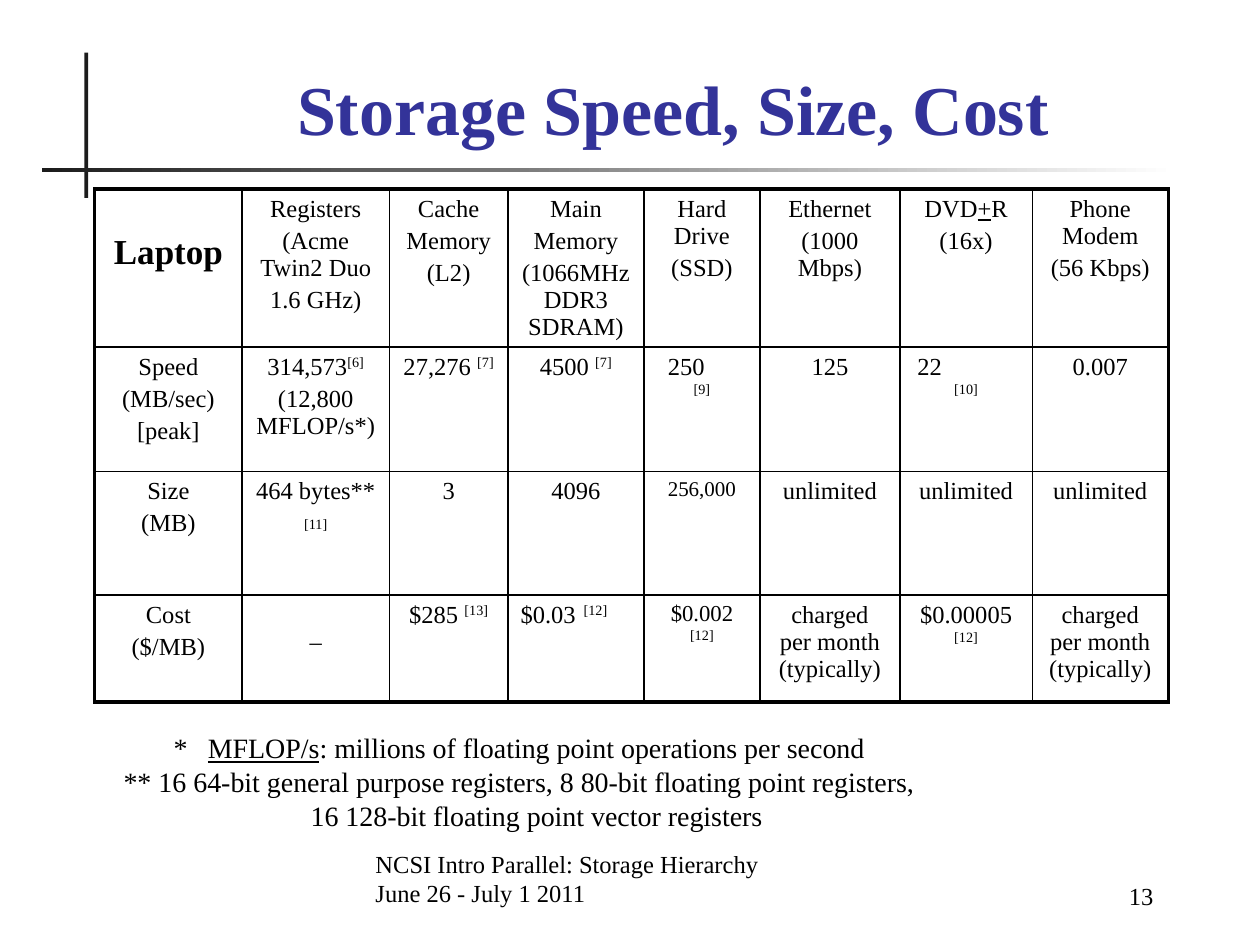
from dataclasses import dataclass

from lxml.etree import SubElement
from pptx import Presentation
from pptx.dml.color import RGBColor
from pptx.enum.shapes import MSO_SHAPE
from pptx.enum.text import MSO_ANCHOR, MSO_AUTO_SIZE, PP_ALIGN
from pptx.oxml.ns import qn
from pptx.util import Cm, Pt


@dataclass(frozen=True)
class Theme:
    font: str = "Times New Roman"
    text: RGBColor = RGBColor(0, 0, 0)
    title: RGBColor = RGBColor(0x33, 0x33, 0x99)
    rule: RGBColor = RGBColor(0x1C, 0x1C, 0x1C)
    paper: RGBColor = RGBColor(0xFF, 0xFF, 0xFF)
    title_size: float = 40
    heading_size: float = 20
    note_size: float = 16
    body_size: float = 14
    thin_border: float = 1
    outer_border: float = 2.25


# Markup: newline = paragraph, "_" toggles underline, "^" starts a
# superscript, "\v" breaks the line before it.
STORAGE_ROWS = [
    ["Laptop", "Registers\n(Acme Twin2 Duo\n1.6 GHz)", "Cache\nMemory\n(L2)",
     "Main\nMemory\n(1066MHz DDR3 SDRAM)", "Hard Drive\n(SSD)",
     "Ethernet\n(1000 Mbps)", "DVD_+_R\n(16x)", "Phone Modem\n(56 Kbps)"],
    ["Speed\n(MB/sec)\n[peak]", "314,573^[6]\n(12,800 MFLOP/s*)", "27,276 ^[7]",
     "4500 ^[7]", "250\n^[9]", "125", "22\n^[10]", "0.007"],
    ["Size\n(MB)", "464 bytes**\n^[11]", "3", "4096", "256,000",
     "unlimited", "unlimited", "unlimited"],
    ["Cost\n($/MB)", "–", "$285 ^[13]", "$0.03\t^[12]", "$0.002\v^[12]",
     "charged per month (typically)", "$0.00005\v^[12]",
     "charged per month (typically)"],
]
COLUMN_WIDTHS = [2.97, 2.97, 2.39, 2.74, 2.34, 2.82, 2.67, 2.74]
ROW_HEIGHTS = [3.15, 2.51, 2.49, 2.16]


class SlideBuilder:
    def __init__(self, slide, theme):
        self.slide = slide
        self.theme = theme

    def format_run(self, run, size, bold=False, color=None):
        run.font.name = self.theme.font
        run.font.size = Pt(size)
        run.font.bold = bold
        run.font.color.rgb = color or self.theme.text

    def write_line(self, paragraph, line, size):
        """Fill one paragraph from a marked-up line."""
        main, _, superscript = line.partition("^")
        for index, piece in enumerate(main.rstrip("\v").split("_")):
            if piece:
                run = paragraph.add_run()
                run.text = piece
                self.format_run(run, size)
                if index % 2:
                    run.font.underline = True
        if main.endswith("\v"):
            paragraph.add_line_break()
        if superscript:
            run = paragraph.add_run()
            run.text = superscript
            self.format_run(run, size)
            run._r.get_or_add_rPr().set("baseline", "30000")

    def write_lines(self, text_frame, text, size, align, gap=0):
        for index, line in enumerate(text.split("\n")):
            paragraph = text_frame.paragraphs[0] if index == 0 else text_frame.add_paragraph()
            paragraph.alignment = align
            if index and gap and not line.startswith("^"):
                paragraph.space_before = Pt(gap)
            self.write_line(paragraph, line, size)

    def indent(self, paragraph, left, first=0, tab=None):
        properties = paragraph._p.get_or_add_pPr()
        properties.set("marL", str(Cm(left)))
        properties.set("indent", str(Cm(first)))
        if tab:
            tabs = SubElement(properties, qn("a:tabLst"))
            SubElement(tabs, qn("a:tab"), pos=str(Cm(tab)), algn="l")

    def title(self, text, left, top, width, height):
        shape = self.slide.shapes.title
        shape.left, shape.top, shape.width, shape.height = map(Cm, (left, top, width, height))
        text_frame = shape.text_frame
        text_frame.text = text
        text_frame.auto_size = MSO_AUTO_SIZE.NONE
        text_frame.vertical_anchor = MSO_ANCHOR.BOTTOM
        paragraph = text_frame.paragraphs[0]
        paragraph.alignment = PP_ALIGN.CENTER
        self.format_run(paragraph.runs[0], self.theme.title_size, True, self.theme.title)

    def bar(self, left, top, width, height, fades=False):
        shape = self.slide.shapes.add_shape(
            MSO_SHAPE.RECTANGLE, Cm(left), Cm(top), Cm(width), Cm(height))
        shape.shadow.inherit = False
        shape.line.fill.background()
        if fades:
            shape.fill.gradient()
            shape.fill.gradient_angle = 0
            for stop, color in zip(shape.fill.gradient_stops, (self.theme.rule, self.theme.paper)):
                stop.color.rgb = color
        else:
            shape.fill.solid()
            shape.fill.fore_color.rgb = self.theme.rule

    def text_box(self, text, left, top, width, height, size,
                 align=PP_ALIGN.LEFT, anchor=MSO_ANCHOR.TOP):
        box = self.slide.shapes.add_textbox(Cm(left), Cm(top), Cm(width), Cm(height))
        box.text_frame.word_wrap = True
        box.text_frame.vertical_anchor = anchor
        self.write_lines(box.text_frame, text, size, align)
        return box.text_frame

    def cell_borders(self, cell, outer_sides):
        properties = cell._tc.get_or_add_tcPr()
        for index, side in enumerate("LRTB"):
            width = self.theme.outer_border if side in outer_sides else self.theme.thin_border
            line = SubElement(properties, qn(f"a:ln{side}"), w=str(Pt(width)))
            fill = SubElement(line, qn("a:solidFill"))
            SubElement(fill, qn("a:srgbClr"), val=str(self.theme.text))
            properties.insert(index, line)

    def table(self, rows, left, top, widths, heights):
        table = self.slide.shapes.add_table(
            len(rows), len(widths), Cm(left), Cm(top),
            Cm(sum(widths)), Cm(sum(heights))).table
        table.first_row = table.horz_banding = False
        for column, width in zip(table.columns, widths):
            column.width = Cm(width)
        last_row, last_column = len(rows) - 1, len(widths) - 1
        for r, texts in enumerate(rows):
            table.rows[r].height = Cm(heights[r])
            for c, text in enumerate(texts):
                cell = table.cell(r, c)
                cell.fill.background()
                edges = {"L": c == 0, "R": c == last_column, "T": r == 0, "B": r == last_row}
                self.cell_borders(cell, [side for side, outer in edges.items() if outer])
                self.write_lines(cell.text_frame, text, self.theme.body_size,
                                 PP_ALIGN.CENTER, gap=2.8)
        return table


def main():
    presentation = Presentation()
    presentation.slide_width, presentation.slide_height = Cm(25.4), Cm(19.05)
    theme = Theme()
    slide = presentation.slides.add_slide(presentation.slide_layouts[5])
    builder = SlideBuilder(slide, theme)

    # Crossed rules and title
    builder.bar(1.7, 1.06, 0.08, 2.93)
    builder.bar(0.85, 3.39, 22.86, 0.08, fades=True)
    builder.title("Storage Speed, Size, Cost", 2.75, 1.27, 21.63, 1.88)

    # Storage comparison
    table = builder.table(STORAGE_ROWS, 1.91, 3.81, COLUMN_WIDTHS, ROW_HEIGHTS)

    # Cells that differ from the common style
    laptop, dash = table.cell(0, 0), table.cell(3, 1)
    laptop.margin_top, dash.margin_top = Cm(0.9), Cm(0.69)
    builder.format_run(laptop.text_frame.paragraphs[0].runs[0], theme.heading_size, bold=True)
    table.cell(2, 1).text_frame.paragraphs[1].line_spacing = 1.2
    table.cell(2, 1).text_frame.paragraphs[1].space_before = Pt(2.8)
    for row, column, size in ((2, 4, 12), (3, 4, 13)):
        table.cell(row, column).text_frame.paragraphs[0].runs[0].font.size = Pt(size)
    for row, column, left, tab in ((1, 4, 0.23, None), (1, 6, 0.1, None), (3, 3, 0, 1.72)):
        paragraph = table.cell(row, column).text_frame.paragraphs[0]
        paragraph.alignment = PP_ALIGN.LEFT
        builder.indent(paragraph, left, tab=tab)

    # Footnotes
    notes = builder.text_box(
        "*\t_MFLOP/s_: millions of floating point operations per second\n"
        "** 16 64-bit general purpose registers, 8 80-bit floating point registers,\n"
        "16 128-bit floating point vector registers",
        2.11, 14.61, 16.71, 2.31, theme.note_size, PP_ALIGN.CENTER)
    notes.paragraphs[0].alignment = PP_ALIGN.LEFT
    builder.indent(notes.paragraphs[0], 1.83, -0.69)
    builder.indent(notes.paragraphs[2], 0.71)

    # Footer and slide number
    builder.text_box("NCSI Intro Parallel: Storage Hierarchy\nJune 26 - July 1 2011",
                     7.32, 17.15, 11.1, 1.27, theme.body_size, anchor=MSO_ANCHOR.BOTTOM)
    builder.text_box("13", 19.89, 17.2, 3.61, 1.27, theme.body_size,
                     PP_ALIGN.RIGHT, MSO_ANCHOR.BOTTOM)

    presentation.save("out.pptx")


if __name__ == "__main__":
    main()
